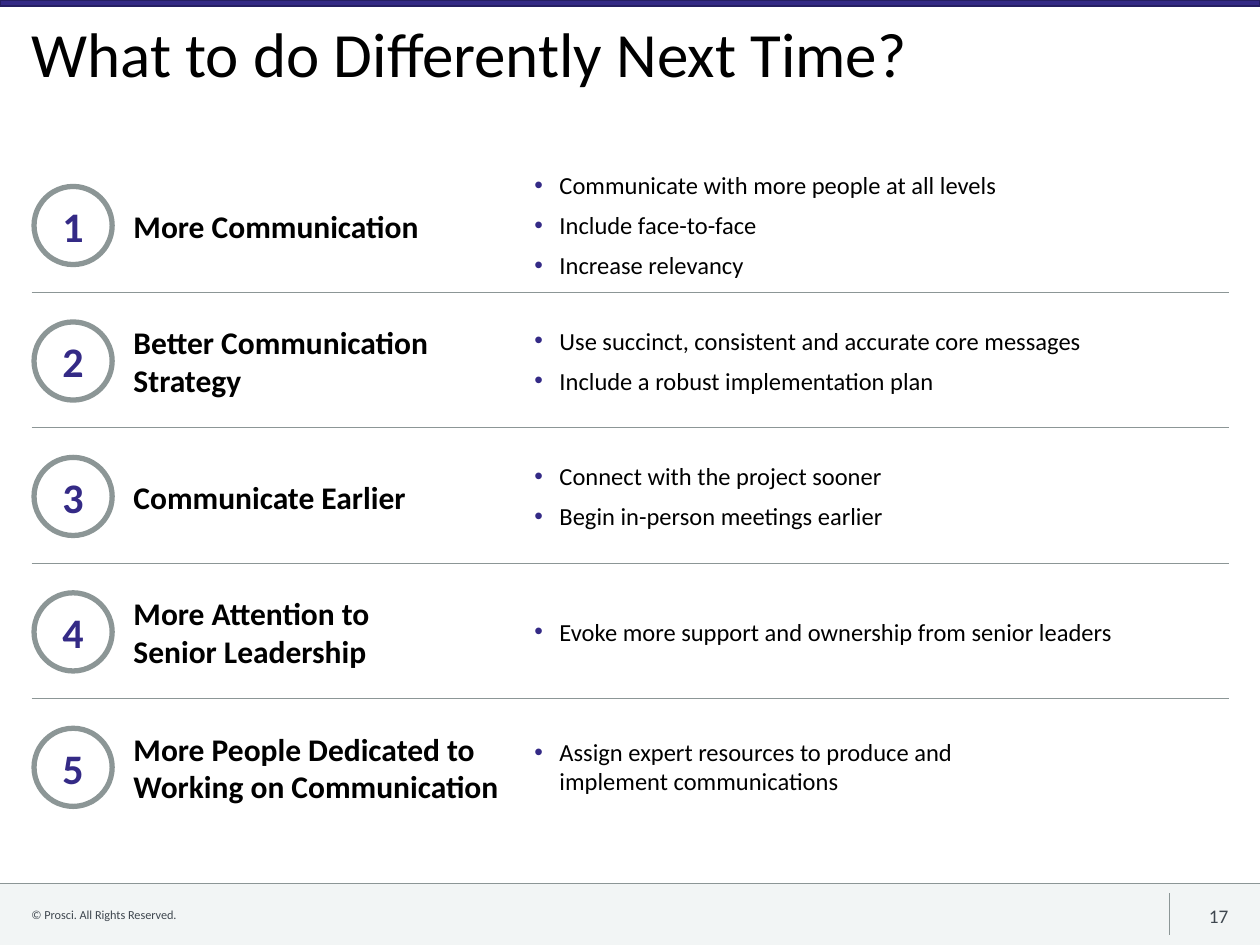
from dataclasses import dataclass

import lxml.etree
import pptx
import pptx.dml.color
import pptx.enum.shapes
import pptx.enum.text
import pptx.oxml.ns
import pptx.util

Inches = pptx.util.Inches
Pt = pptx.util.Pt
Align = pptx.enum.text.PP_ALIGN
Anchor = pptx.enum.text.MSO_ANCHOR
Shape = pptx.enum.shapes.MSO_SHAPE
qn = pptx.oxml.ns.qn


@dataclass(frozen=True)
class Theme:
    font: str = "Calibri"
    accent: str = "342A86"
    accent_dark: str = "261F63"
    gray: str = "8C9696"
    footer_fill: str = "F2F5F5"
    footer_text: str = "3F474F"
    text: str = "000000"
    title_size: int = 36
    number_size: int = 24
    heading_size: int = 18
    list_size: int = 14
    page_size: int = 11
    copyright_size: int = 7


LEFT, RIGHT = 0.25, 9.75
FOOTER_TOP = 7.01
FIRST_CENTER, ROW_PITCH = 1.79, 1.075
DIVIDER_OFFSET = 0.53
CIRCLE_LEFT, CIRCLE_SIZE = 0.27, 0.62
HEADING_LEFT, HEADING_WIDTH, HEADING_LINE = 1.06, 8.36, 0.3
LIST_LEFT, LIST_LINE, LIST_GAP, LIST_INSET = 4.24, 0.24, 0.08, 0.05

ROWS = [
    (["More Communication"],
     ["Communicate with more people at all levels", "Include face-to-face", "Increase relevancy"]),
    (["Better Communication", "Strategy"],
     ["Use succinct, consistent and accurate core messages",
      "Include a robust implementation plan"]),
    (["Communicate Earlier"],
     ["Connect with the project sooner", "Begin in-person meetings earlier"]),
    (["More Attention to", "Senior Leadership"],
     ["Evoke more support and ownership from senior leaders"]),
    (["More People Dedicated to", "Working on Communication"],
     ["Assign expert resources to produce and \nimplement communications"]),
]


def rgb(color):
    return pptx.dml.color.RGBColor.from_string(color)


def add_bullet(paragraph, color):
    """Give the paragraph a coloured bullet with a hanging indent."""
    properties = paragraph._p.get_or_add_pPr()
    properties.set("marL", str(Inches(0.2)))
    properties.set("indent", str(-Inches(0.2)))
    bullet_color = lxml.etree.SubElement(properties, qn("a:buClr"))
    lxml.etree.SubElement(bullet_color, qn("a:srgbClr"), val=color)
    lxml.etree.SubElement(properties, qn("a:buFont"), typeface="Arial")
    lxml.etree.SubElement(properties, qn("a:buChar"), char="•")


def write_text(frame, lines, *, font, size, color, bold=False, align=Align.LEFT,
               anchor=Anchor.TOP, insets=(0, 0.05, 0, 0.05), line_spacing=None,
               space_after=None, bullet_color=None):
    """Fill a text frame, one paragraph a line; insets are left, top, right, bottom."""
    frame.word_wrap = True
    frame.auto_size = pptx.enum.text.MSO_AUTO_SIZE.NONE
    frame.vertical_anchor = anchor
    (frame.margin_left, frame.margin_top,
     frame.margin_right, frame.margin_bottom) = map(Inches, insets)
    for index, line in enumerate(lines):
        paragraph = frame.add_paragraph() if index else frame.paragraphs[0]
        paragraph.text = line
        paragraph.alignment = align
        if line_spacing is not None:
            paragraph.line_spacing = line_spacing
        if space_after is not None:
            paragraph.space_after = Pt(space_after)
        if bullet_color:
            add_bullet(paragraph, bullet_color)
        for line_break in paragraph._p.findall(qn("a:br")):
            lxml.etree.SubElement(line_break, qn("a:rPr"), sz=str(size * 100))
        for run in paragraph.runs:
            run.font.name = font
            run.font.size = Pt(size)
            run.font.bold = bold
            run.font.color.rgb = rgb(color)


class SlideBuilder:
    def __init__(self, slide, theme):
        self.slide = slide
        self.theme = theme

    def title(self, text):
        title = self.slide.shapes.title
        title.left, title.top = Inches(LEFT), Inches(0.13)
        title.width, title.height = Inches(RIGHT - LEFT), Inches(0.9)
        write_text(title.text_frame, [text], font=self.theme.font, size=self.theme.title_size,
                   color=self.theme.text, line_spacing=0.9)

    def shape(self, preset, left, top, width, height, fill=None, line=None, line_width=1):
        shape = self.slide.shapes.add_shape(
            preset, Inches(left), Inches(top), Inches(width), Inches(height))
        shape.shadow.inherit = False
        if fill:
            shape.fill.solid()
            shape.fill.fore_color.rgb = rgb(fill)
        else:
            shape.fill.background()
        if line:
            shape.line.color.rgb = rgb(line)
            shape.line.width = Pt(line_width)
        else:
            shape.line.fill.background()
        return shape

    def rule(self, x1, y1, x2, y2):
        connector = self.slide.shapes.add_connector(
            pptx.enum.shapes.MSO_CONNECTOR.STRAIGHT,
            Inches(x1), Inches(y1), Inches(x2), Inches(y2))
        connector.line.color.rgb = rgb(self.theme.gray)
        connector.line.width = Pt(0.5)
        lxml.etree.SubElement(connector._element.spPr, qn("a:effectLst"))

    def text(self, lines, left, top, width, height, **text_format):
        box = self.slide.shapes.add_textbox(
            Inches(left), Inches(top), Inches(width), Inches(height))
        write_text(box.text_frame, lines, font=self.theme.font, **text_format)
        return box

    def numbered_heading(self, number, lines, center):
        height = HEADING_LINE * len(lines)
        heading = self.text(lines, HEADING_LEFT, center - height / 2, HEADING_WIDTH, height,
                            size=self.theme.heading_size, color=self.theme.text, bold=True,
                            anchor=Anchor.MIDDLE, insets=(0, 0, 0, 0))
        circle = self.shape(Shape.OVAL, CIRCLE_LEFT, center - CIRCLE_SIZE / 2,
                            CIRCLE_SIZE, CIRCLE_SIZE, line=self.theme.gray, line_width=3)
        write_text(circle.text_frame, [str(number)], font=self.theme.font,
                   size=self.theme.number_size, color=self.theme.accent, bold=True,
                   align=Align.CENTER, anchor=Anchor.MIDDLE, insets=(0.1, 0.05, 0.1, 0.05))
        self.slide.shapes.add_group_shape([heading, circle])

    def bullet_list(self, items, center):
        line_count = sum(item.count("\n") + 1 for item in items)
        height = line_count * LIST_LINE + (len(items) - 1) * LIST_GAP + 2 * LIST_INSET
        self.text(items, LIST_LEFT, center - height / 2, RIGHT - LIST_LEFT, height,
                  size=self.theme.list_size, color=self.theme.text, space_after=6,
                  bullet_color=self.theme.accent)

    def frame(self, copyright_line, page_number):
        """Draw the top band and the footer."""
        theme = self.theme
        self.shape(Shape.RECTANGLE, 0, FOOTER_TOP, 10, 7.5 - FOOTER_TOP, fill=theme.footer_fill)
        self.shape(Shape.RECTANGLE, 0, 0, 10, 0.05, fill=theme.accent, line=theme.accent_dark)
        self.rule(0, FOOTER_TOP, 10, FOOTER_TOP)
        self.rule(9.28, 7.09, 9.28, 7.42)
        self.text([copyright_line], LEFT, 7.15, 7.34, 0.22, size=theme.copyright_size,
                  color=theme.footer_text, anchor=Anchor.MIDDLE, insets=(0, 0.05, 0.1, 0.05))
        self.text([page_number], 9.26, 7.16, 0.49, 0.21, size=theme.page_size,
                  color=theme.footer_text, align=Align.RIGHT, anchor=Anchor.MIDDLE,
                  insets=(0, 0, 0, 0))


def main():
    presentation = pptx.Presentation()
    presentation.slide_width, presentation.slide_height = Inches(10), Inches(7.5)
    title_only = presentation.slide_layouts[5]
    builder = SlideBuilder(presentation.slides.add_slide(title_only), Theme())

    builder.frame("© Prosci. All Rights Reserved.", "17")
    builder.title("What to do Differently Next Time?")
    for index, (heading, items) in enumerate(ROWS):
        center = FIRST_CENTER + index * ROW_PITCH
        builder.numbered_heading(index + 1, heading, center)
        builder.bullet_list(items, center)
        if index < len(ROWS) - 1:
            divider = center + DIVIDER_OFFSET
            builder.rule(LEFT, divider, RIGHT, divider)
    presentation.save("out.pptx")


if __name__ == "__main__":
    main()
